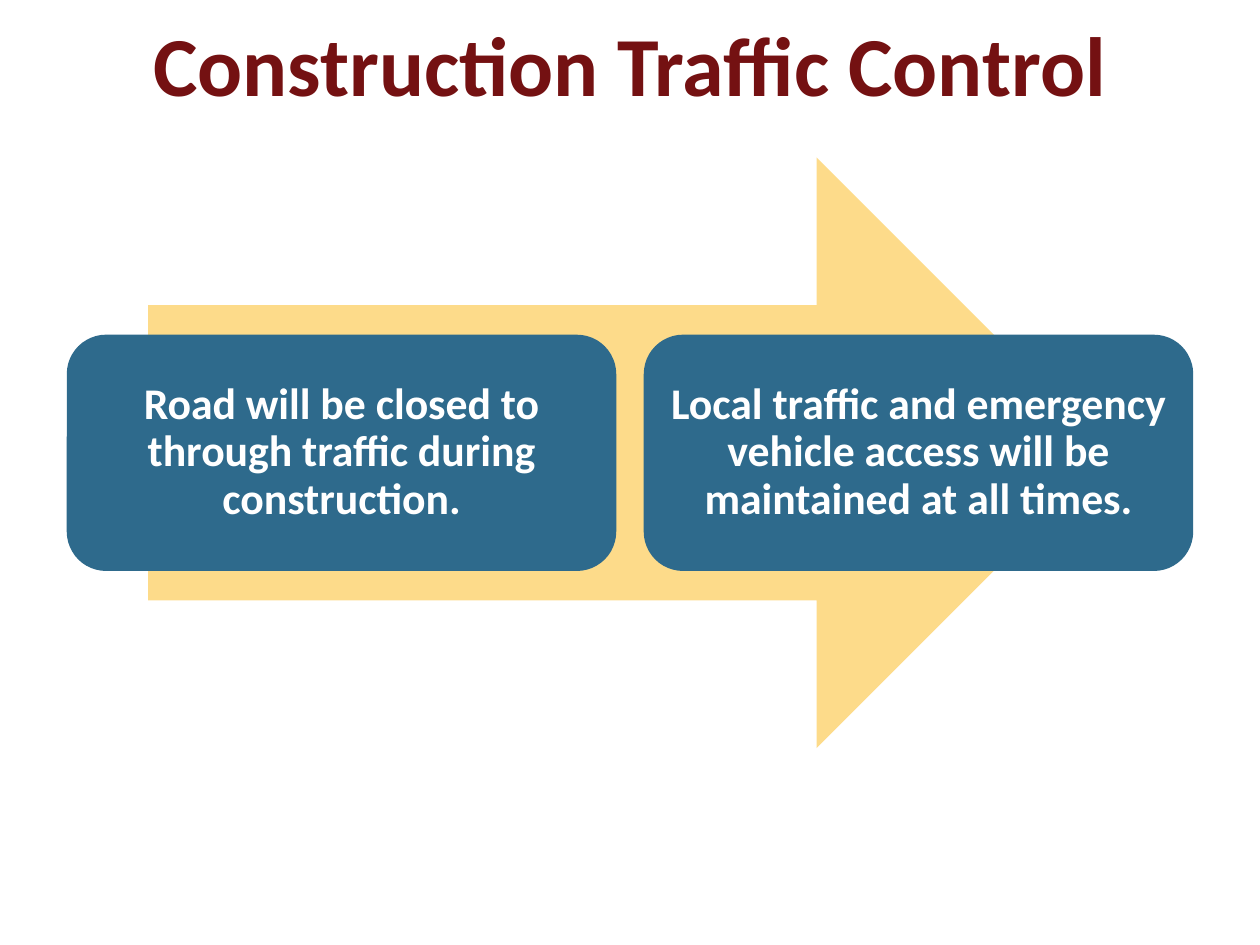
from lxml import etree
from pptx import Presentation
from pptx.dml.color import RGBColor
from pptx.enum.shapes import MSO_SHAPE
from pptx.enum.text import MSO_ANCHOR, MSO_AUTO_SIZE, PP_ALIGN
from pptx.oxml.ns import qn
from pptx.util import Pt

ARROW = MSO_SHAPE.RIGHT_ARROW
ROUNDED = MSO_SHAPE.ROUNDED_RECTANGLE
MIDDLE = MSO_ANCHOR.MIDDLE
CENTER = PP_ALIGN.CENTER
NO_AUTOFIT = MSO_AUTO_SIZE.NONE

FONT = "Calibri"
COLORS = {"title": "741112", "arrow": "FDB917", "card": "2E6A8C", "text": "FFFFFF"}
MEASURES = [
    "Road will be closed to through traffic during construction.",
    "Local traffic and emergency vehicle access will be maintained at all times.",
]


def write_text(shape, text, size, color):
    frame = shape.text_frame
    frame.text = text
    frame.word_wrap = True
    frame.auto_size = NO_AUTOFIT
    frame.vertical_anchor = MIDDLE
    para = frame.paragraphs[0]
    para.alignment = CENTER
    font = para.runs[0].font
    font.name = FONT
    font.size = Pt(size)
    font.bold = True
    font.color.rgb = RGBColor.from_string(COLORS[color])
    return frame


def add_filled_shape(page, kind, left, top, width, height, color):
    shape = page.shapes.add_shape(kind, Pt(left), Pt(top), Pt(width), Pt(height))
    shape.shadow.inherit = False
    shape.fill.solid()
    shape.fill.fore_color.rgb = RGBColor.from_string(COLORS[color])
    shape.line.fill.background()
    return shape


def set_opacity(shape, percent):
    color = shape.fill._xPr.find(qn("a:solidFill"))[0]
    etree.SubElement(color, qn("a:alpha"), val=str(percent * 1000))


def place_title(page, text, left, top, width, height):
    title = page.shapes.title
    title.left, title.top, title.width, title.height = map(Pt, (left, top, width, height))
    write_text(title, text, 48, "title")


def add_arrow_process(page, steps, left, top, width, height):
    """Lay a row of step cards, centred, over a wide arrow."""
    arrow_width = width * 0.85
    arrow_left = left + (width - arrow_width) / 2
    arrow = add_filled_shape(page, ARROW, arrow_left, top, arrow_width, height, "arrow")
    set_opacity(arrow, 50)

    card_width, gap = 314, 15.7
    card_height = height * 0.4
    row_width = len(steps) * (card_width + gap) - gap
    row_left = left + (width - row_width) / 2
    card_top = top + (height - card_height) / 2
    for index, step in enumerate(steps):
        card_left = row_left + index * (card_width + gap)
        card = add_filled_shape(page, ROUNDED, card_left, card_top,
                                card_width, card_height, "card")
        frame = write_text(card, step, 25, "text")
        frame.margin_left = frame.margin_right = Pt(7)
        frame.margin_top = frame.margin_bottom = Pt(7)
        frame.paragraphs[0].line_spacing = 0.9


def main():
    deck = Presentation()
    deck.slide_width, deck.slide_height = Pt(720), Pt(540)
    page = deck.slides.add_slide(deck.slide_layouts[5])
    place_title(page, "Construction Traffic Control", 0, 0, 720, 72)
    add_arrow_process(page, MEASURES, 36, 90, 648, 337.5)
    deck.save("out.pptx")


if __name__ == "__main__":
    main()
